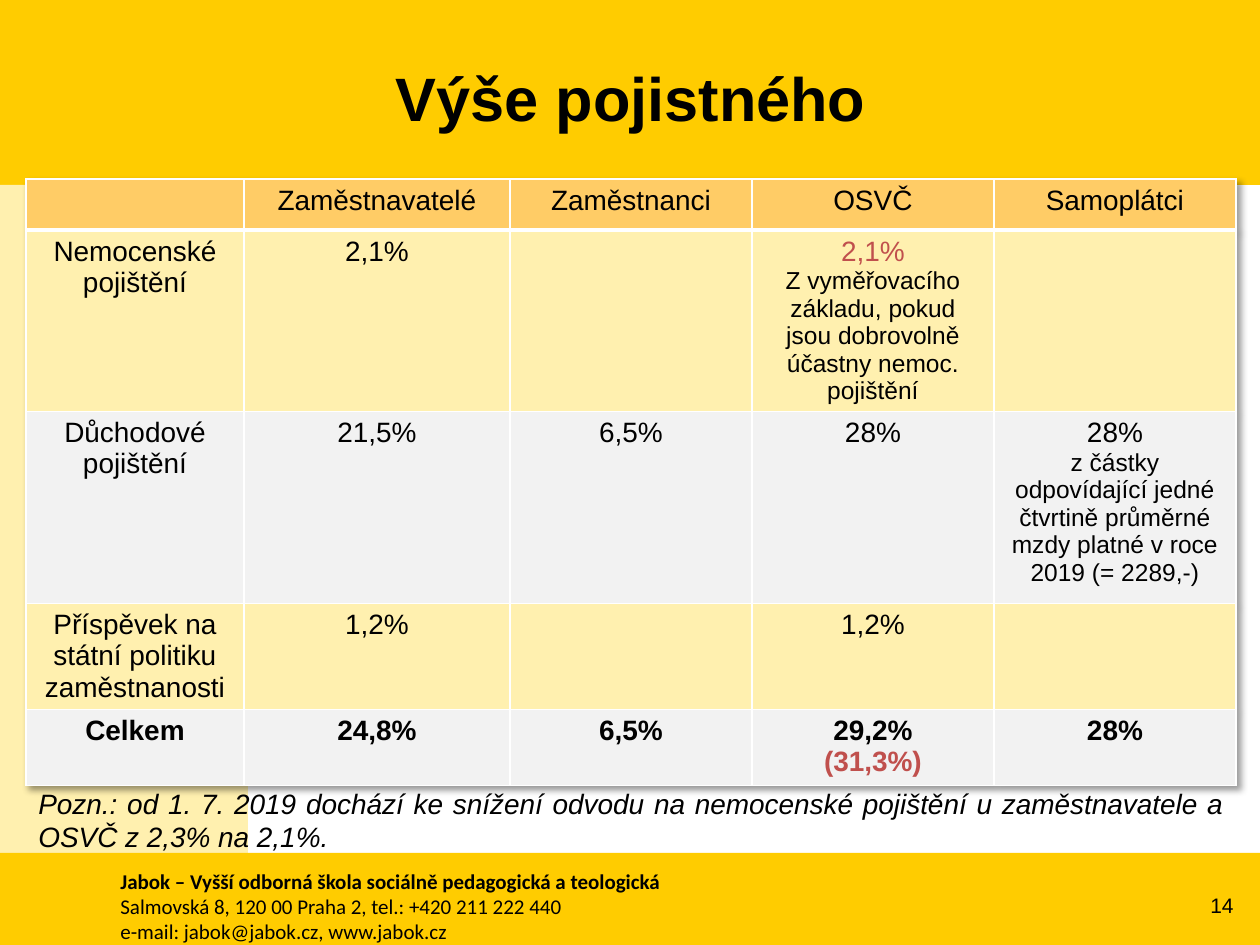
from dataclasses import dataclass

from lxml import etree
from pptx import Presentation
from pptx import util as u
from pptx.dml.color import RGBColor
from pptx.enum import shapes, text
from pptx.oxml import ns

SCALE = 914400 / 126  # EMU in one px


def px(length):
    return u.Emu(round(length * SCALE))


@dataclass(frozen=True)
class Theme:
    gold: str = "FFCC00"
    cream: str = "FFF0AF"
    header: str = "FFCC66"
    grey: str = "F2F2F2"
    white: str = "FFFFFF"
    ink: str = "000000"
    accent: str = "C0504D"
    body_font: str = "Arial"
    footer_font: str = "Calibri"
    title_size: int = 35
    body_size: int = 16
    note_size: int = 14
    footer_size: int = 12


@dataclass(frozen=True)
class Line:
    """One paragraph of a table cell, set apart from the body style."""
    words: str
    accent: bool = False
    small: bool = False


class SlideBuilder:
    def __init__(self, slide, theme):
        self.slide = slide
        self.theme = theme

    def style(self, paragraph, size, align=text.PP_ALIGN.LEFT, color=None,
              font=None, bold=False, italic=False):
        paragraph.alignment = align
        face = paragraph.font
        face.name = font or self.theme.body_font
        face.size = u.Pt(size)
        face.bold = bold
        face.italic = italic
        face.color.rgb = RGBColor.from_string(color or self.theme.ink)

    def band(self, left, top, width, height, color):
        band = self.slide.shapes.add_shape(
            shapes.MSO_SHAPE.RECTANGLE, px(left), px(top), px(width), px(height))
        band.shadow.inherit = False
        band.fill.solid()
        band.fill.fore_color.rgb = RGBColor.from_string(color)
        band.line.fill.background()

    def title(self, words, left, top, width, height):
        title = self.slide.shapes.title
        title.left, title.top = px(left), px(top)
        title.width, title.height = px(width), px(height)
        frame = title.text_frame
        frame.text = words
        frame.vertical_anchor = text.MSO_ANCHOR.MIDDLE
        self.style(frame.paragraphs[0], self.theme.title_size,
                   text.PP_ALIGN.CENTER, bold=True)
        # Bring the title in front of the bands
        self.slide.shapes._spTree.append(title._element)

    def textbox(self, lines, left, top, width, height, size,
                anchor=text.MSO_ANCHOR.TOP, bold_first=False, **style):
        box = self.slide.shapes.add_textbox(px(left), px(top), px(width), px(height))
        frame = box.text_frame
        frame.word_wrap = True
        frame.vertical_anchor = anchor
        frame.text = "\n".join(lines)
        for index, paragraph in enumerate(frame.paragraphs):
            self.style(paragraph, size, bold=bold_first and index == 0, **style)

    def borders(self, cell, top, bottom):
        properties = cell._tc.get_or_add_tcPr()
        widths = {"a:lnL": 1, "a:lnR": 1, "a:lnT": top, "a:lnB": bottom}
        for index, (side, width) in enumerate(widths.items()):
            line = etree.Element(ns.qn(side), w=str(u.Pt(width)))
            fill = etree.SubElement(line, ns.qn("a:solidFill"))
            etree.SubElement(fill, ns.qn("a:srgbClr"), val=self.theme.white)
            properties.insert(index, line)

    def table_shadow(self, table):
        effects = etree.Element(ns.qn("a:effectLst"))
        shadow = etree.SubElement(
            effects, ns.qn("a:outerShdw"), blurRad="50800", dist="38100",
            dir="2700000", algn="tl", rotWithShape="0")
        color = etree.SubElement(shadow, ns.qn("a:srgbClr"), val=self.theme.ink)
        etree.SubElement(color, ns.qn("a:alpha"), val="40000")
        table._tbl.tblPr.insert(0, effects)

    def cell(self, cell, lines, color, bold):
        cell.fill.solid()
        cell.fill.fore_color.rgb = RGBColor.from_string(color)
        lines = [Line(line) if isinstance(line, str) else line for line in lines]
        cell.text = "\n".join(line.words for line in lines)
        for paragraph, line in zip(cell.text_frame.paragraphs, lines):
            theme = self.theme
            self.style(paragraph, theme.note_size if line.small else theme.body_size,
                       text.PP_ALIGN.CENTER, theme.accent if line.accent else None,
                       bold=bold)

    def table(self, rows, left, top, widths, heights):
        table = self.slide.shapes.add_table(
            len(rows), len(widths), px(left), px(top),
            px(sum(widths)), px(sum(heights))).table
        table.first_row = table.horz_banding = False
        self.table_shadow(table)
        for column, width in zip(table.columns, widths):
            column.width = px(width)
        fills = [self.theme.header] + [self.theme.cream, self.theme.grey] * 2
        for r, (lines_by_cell, height) in enumerate(zip(rows, heights)):
            table.rows[r].height = px(height)
            for c, lines in enumerate(lines_by_cell):
                cell = table.cell(r, c)
                self.cell(cell, lines, fills[r], bold=r == len(rows) - 1)
                self.borders(cell, top=3 if r == 1 else 1, bottom=3 if r == 0 else 1)


EMPTY = [""]
PREMIUMS = [
    [EMPTY, ["Zaměstnavatelé"], ["Zaměstnanci"], ["OSVČ"], ["Samoplátci"]],
    [["Nemocenské pojištění"], ["2,1%"], EMPTY,
     [Line("2,1%", accent=True),
      Line("Z vyměřovacího základu, pokud jsou dobrovolně účastny nemoc. pojištění",
           small=True)],
     EMPTY],
    [["Důchodové pojištění"], ["21,5%"], ["6,5%"], ["28%"],
     ["28%",
      Line("z částky odpovídající jedné čtvrtině průměrné mzdy platné "
           "v roce 2019 (= 2289,-)", small=True)]],
    [["Příspěvek na státní politiku zaměstnanosti"], ["1,2%"], EMPTY, ["1,2%"], EMPTY],
    [["Celkem"], ["24,8%"], ["6,5%"],
     ["29,2%", Line("(31,3%)", accent=True)], ["28%"]],
]


def main():
    deck = Presentation()
    deck.slide_width, deck.slide_height = px(1260), px(945)
    theme = Theme()
    page = SlideBuilder(deck.slides.add_slide(deck.slide_layouts[5]), theme)

    # Background bands
    page.band(0, 0, 1260, 185, theme.gold)
    page.band(0, 185, 248, 760, theme.cream)
    page.band(0, 853, 1260, 92, theme.gold)

    # Footer with the school's address and the page number
    page.textbox(
        ["Jabok – Vyšší odborná škola sociálně pedagogická a teologická",
         "Salmovská 8, 120 00 Praha 2, tel.: +420 211 222 440",
         "e-mail: jabok@jabok.cz, www.jabok.cz"],
        108, 862, 1032, 89, theme.footer_size,
        font=theme.footer_font, bold_first=True)
    page.textbox(["14"], 1167, 880, 79, 50, theme.footer_size,
                 anchor=text.MSO_ANCHOR.MIDDLE, align=text.PP_ALIGN.RIGHT)

    # Title, premium table and its note
    page.title("Výše pojistného", 64, 18, 1134, 158)
    page.table(PREMIUMS, 26, 179, [218, 266, 242, 242, 242], [51, 181, 192, 106, 76])
    page.textbox(
        ["Pozn.: od 1. 7. 2019 dochází ke snížení odvodu na nemocenské pojištění "
         "u zaměstnavatele a OSVČ z 2,3% na 2,1%."],
        26, 780, 1210, 81, theme.body_size,
        align=text.PP_ALIGN.JUSTIFY, italic=True)

    deck.save("out.pptx")


if __name__ == "__main__":
    main()
